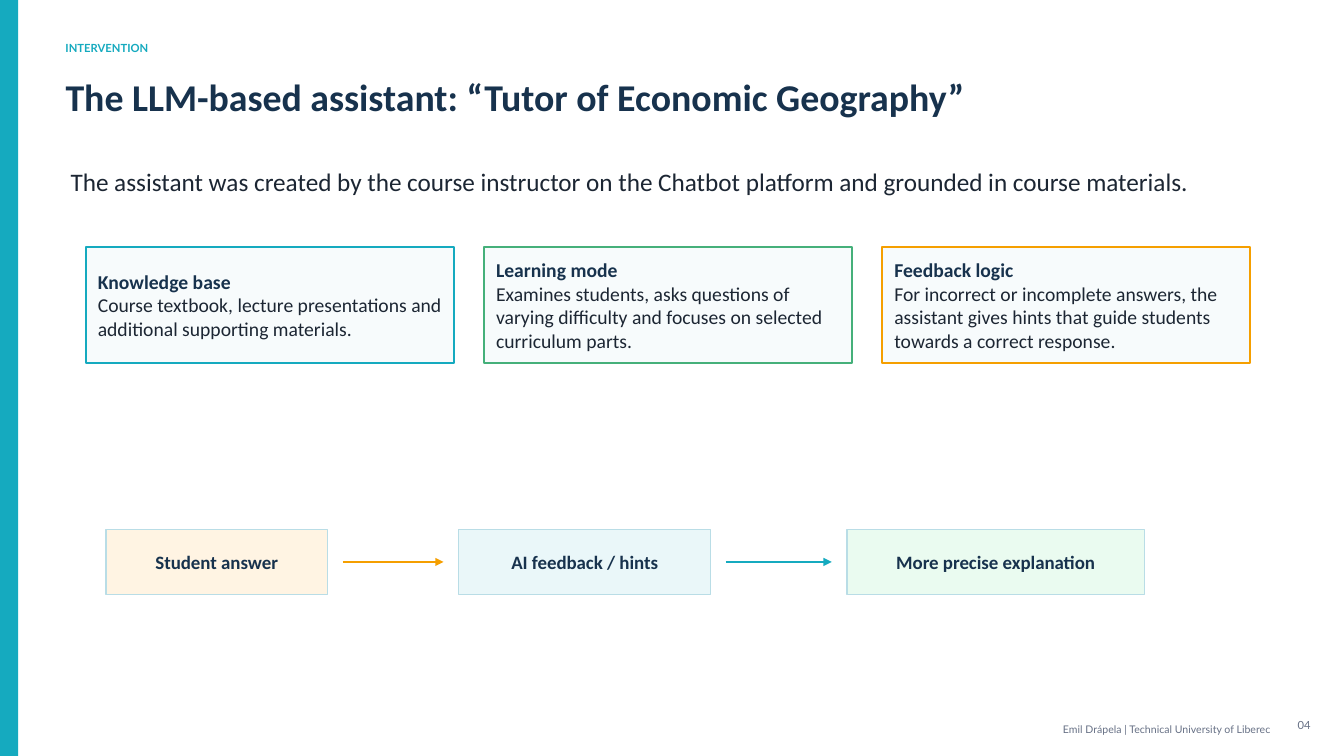
from itertools import pairwise

from lxml.etree import SubElement
from pptx import Presentation
from pptx.dml.color import RGBColor
from pptx.enum.shapes import MSO_CONNECTOR, MSO_SHAPE
from pptx.enum.text import MSO_ANCHOR, MSO_AUTO_SIZE, PP_ALIGN
from pptx.oxml.ns import qn
from pptx.util import Inches, Pt

COLORS = {
    "teal": "15AABF", "green": "45B07A", "orange": "F59F00",
    "navy": "17324D", "ink": "1C2633", "gray": "667085",
    "card": "F7FBFC", "border": "B9DDE6",
    "pale_orange": "FFF4E3", "pale_teal": "EAF7F9", "pale_green": "EAFBF0",
}

CARDS = [
    ("Knowledge base", "teal",
     "Course textbook, lecture presentations and additional supporting materials."),
    ("Learning mode", "green",
     "Examines students, asks questions of varying difficulty and focuses on "
     "selected curriculum parts."),
    ("Feedback logic", "orange",
     "For incorrect or incomplete answers, the assistant gives hints that guide "
     "students towards a correct response."),
]
CARD_LEFT, CARD_TOP, CARD_WIDTH, CARD_HEIGHT, CARD_GAP = 0.85, 2.45, 3.65, 1.15, 0.3

# label, left, width, fill
STEPS = [
    ("Student answer", 1.05, 2.2, "pale_orange"),
    ("AI feedback / hints", 4.55, 2.5, "pale_teal"),
    ("More precise explanation", 8.4, 2.95, "pale_green"),
]
STEP_TOP, STEP_HEIGHT, ARROW_MARGIN = 5.25, 0.65, 0.15
ARROW_COLORS = ["orange", "teal"]


def rgb(name):
    return RGBColor.from_string(COLORS[name])


def add_run(paragraph, text, size, color, bold=False, font="Calibri"):
    run = paragraph.add_run()
    run.text = text
    run.font.name = font
    run.font.size = Pt(size)
    run.font.bold = bold
    run.font.color.rgb = rgb(color)


def write_text(shape, text, align=PP_ALIGN.LEFT, inset=0, **run_format):
    """Fill a shape with one vertically centred paragraph and return it."""
    frame = shape.text_frame
    frame.word_wrap = True
    frame.auto_size = MSO_AUTO_SIZE.NONE
    frame.vertical_anchor = MSO_ANCHOR.MIDDLE
    frame.margin_left = Inches(inset)
    frame.margin_top = frame.margin_right = frame.margin_bottom = 0
    paragraph = frame.paragraphs[0]
    paragraph.alignment = align
    add_run(paragraph, text, **run_format)
    return paragraph


def add_title(slide, text, left, top, width, height):
    title = slide.shapes.title
    title.left, title.top = Inches(left), Inches(top)
    title.width, title.height = Inches(width), Inches(height)
    write_text(title, text, size=27, color="navy", bold=True)


def add_label(slide, text, left, top, width, height, **text_format):
    box = slide.shapes.add_textbox(
        Inches(left), Inches(top), Inches(width), Inches(height))
    write_text(box, text, **text_format)


def add_box(slide, left, top, width, height, fill, line=None, line_width=1):
    box = slide.shapes.add_shape(
        MSO_SHAPE.RECTANGLE, Inches(left), Inches(top), Inches(width), Inches(height))
    box.shadow.inherit = False
    box.fill.solid()
    box.fill.fore_color.rgb = rgb(fill)
    if line:
        box.line.color.rgb = rgb(line)
        box.line.width = Pt(line_width)
    else:
        box.line.fill.background()
    return box


def add_arrow(slide, start, end, y, color):
    arrow = slide.shapes.add_connector(
        MSO_CONNECTOR.STRAIGHT, Inches(start), Inches(y), Inches(end), Inches(y))
    arrow.line.color.rgb = rgb(color)
    arrow.line.width = Pt(1.2)
    SubElement(arrow.line._get_or_add_ln(), qn("a:tailEnd"), type="triangle")
    SubElement(arrow._element.spPr, qn("a:effectLst"))


def add_cards(slide):
    for index, (heading, color, body) in enumerate(CARDS):
        left = CARD_LEFT + index * (CARD_WIDTH + CARD_GAP)
        card = add_box(slide, left, CARD_TOP, CARD_WIDTH, CARD_HEIGHT,
                       "card", color, 1.2)
        paragraph = write_text(card, heading, inset=0.12, size=14,
                               color="navy", bold=True)
        paragraph.add_line_break()
        add_run(paragraph, body, size=14, color="ink")


def add_feedback_flow(slide):
    for label, left, width, fill in STEPS:
        step = add_box(slide, left, STEP_TOP, width, STEP_HEIGHT, fill, "border")
        write_text(step, label, align=PP_ALIGN.CENTER, size=13.5,
                   color="navy", bold=True)
    middle = STEP_TOP + STEP_HEIGHT / 2
    for (before, after), color in zip(pairwise(STEPS), ARROW_COLORS):
        start = before[1] + before[2] + ARROW_MARGIN
        add_arrow(slide, start, after[1] - ARROW_MARGIN, middle, color)


def main():
    presentation = Presentation()
    presentation.slide_width = Inches(13.33)
    presentation.slide_height = Inches(7.5)
    title_only = presentation.slide_layouts[5]
    slide = presentation.slides.add_slide(title_only)

    add_box(slide, 0, 0, 0.18, 7.5, "teal")
    add_label(slide, "INTERVENTION", 0.65, 0.35, 2.8, 0.25,
              size=8, color="teal", bold=True, font="Lato")
    add_title(slide, "The LLM-based assistant: “Tutor of Economic Geography”",
              0.65, 0.68, 11.55, 0.55)
    add_label(slide, "The assistant was created by the course instructor on the "
              "Chatbot platform and grounded in course materials.",
              0.7, 1.4, 11.7, 0.8, size=18, color="ink")
    add_cards(slide)
    add_feedback_flow(slide)
    add_label(slide, "Emil Drápela | Technical University of Liberec",
              8.75, 7.12, 3.85, 0.22, align=PP_ALIGN.RIGHT,
              size=7.5, color="gray", font="Lato")
    add_label(slide, "04", 12.65, 7.08, 0.35, 0.22, align=PP_ALIGN.RIGHT,
              size=8, color="gray", font="Lato")

    presentation.save("out.pptx")


if __name__ == "__main__":
    main()
